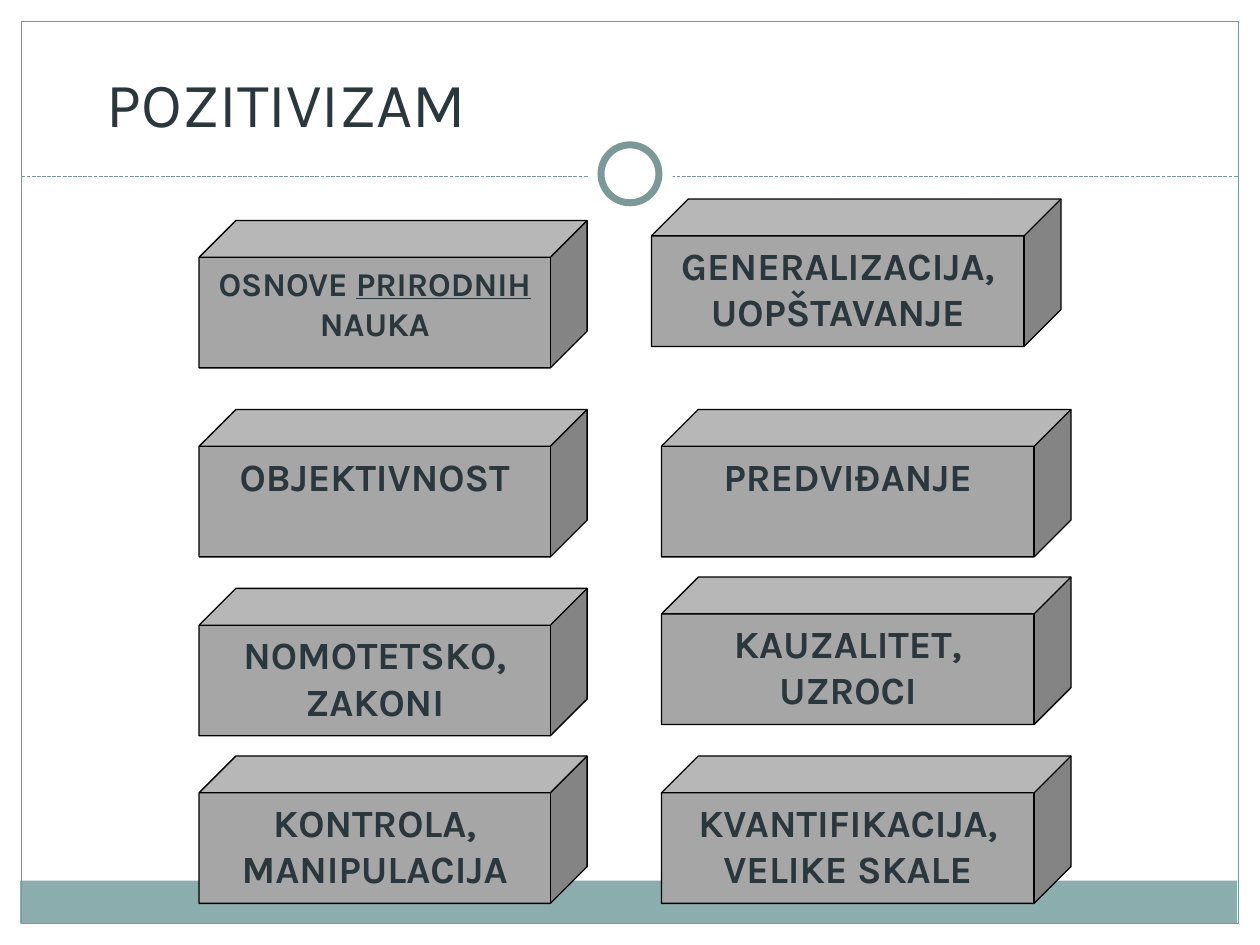
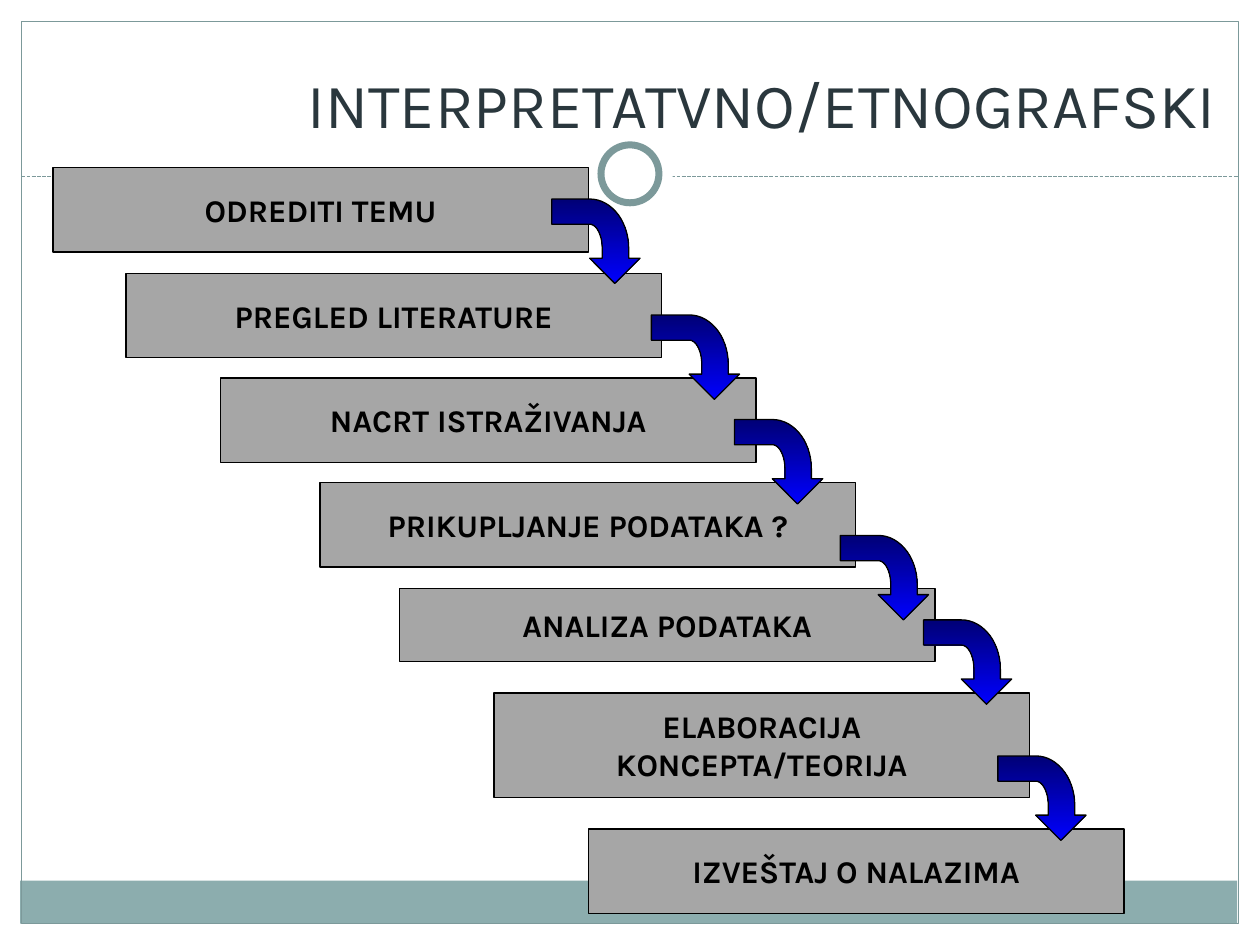
"""Builds two slides on positivist and interpretive research."""
import math
from dataclasses import dataclass
from typing import Any, Iterable, Optional

from lxml import etree
from pptx import Presentation
from pptx import util as u
from pptx.dml.color import RGBColor
from pptx.enum import dml, shapes, text
from pptx.oxml import ns

FONT = "Karla"
WHITE, BLACK, GREY = "FFFFFF", "000000", "A6A6A6"
INK, TEAL, BAND = "2A373D", "7C999A", "8CADAE"
ARROW_TOP, ARROW_BOTTOM = "000076", "0000FF"
CUBE_LEFT, CUBE_WIDTH, CUBE_HEIGHT = 1.58, 3.08, 1.17
RIGHT_CUBE_LEFT, RIGHT_CUBE_WIDTH = 5.25, 3.25
STEP_WIDTH = 4.25


@dataclass(frozen=True)
class Box:
    """Position and size in inches."""
    left: float
    top: float
    width: float
    height: float

    def lengths(self) -> tuple:
        """Return the four values as lengths."""
        return tuple(u.Inches(v) for v in (self.left, self.top, self.width, self.height))


@dataclass(frozen=True)
class Part:
    """A preset shape of the slide frame."""
    kind: Any
    box: Box
    fill: Optional[str] = None
    line: Optional[str] = None
    weight: float = 0.75


@dataclass(frozen=True)
class Title:
    """A slide title with its box and alignment."""
    wording: str
    box: Box
    align: Any


@dataclass(frozen=True)
class Cube:
    """A feature of positivism; underscores enclose underlined words."""
    box: Box
    lines: tuple
    size: float = 22


@dataclass(frozen=True)
class Step:
    """A research step."""
    left: float
    top: float
    lines: tuple
    height: float = 0.67


@dataclass(frozen=True)
class Arrow:
    """The start corner of an arrow that bends down."""
    left: float
    top: float


RECTANGLE, OVAL = shapes.MSO_SHAPE.RECTANGLE, shapes.MSO_SHAPE.OVAL
BACKDROP = [
    Part(RECTANGLE, Box(0, 0, 10, 1.52), WHITE),
    Part(RECTANGLE, Box(0, 0, 0.17, 7.5), WHITE),
    Part(RECTANGLE, Box(9.83, 0, 0.17, 7.5), WHITE),
    Part(RECTANGLE, Box(0.16, 6.99, 9.66, 0.34), BAND),
    Part(RECTANGLE, Box(0.17, 0.17, 9.66, 7.16), None, TEAL),
]
RING = [
    Part(OVAL, Box(4.67, 1.05, 0.67, 0.67), WHITE),
    Part(OVAL, Box(4.77, 1.15, 0.46, 0.46), WHITE, TEAL, 4),
]
POSITIVISM = Title("POZITIVIZAM", Box(0.75, 0.33, 8.5, 0.83), text.PP_ALIGN.LEFT)
INTERPRETIVE = Title("INTERPRETATVNO/ETNOGRAFSKI", Box(0.5, 0.17, 9.25, 1), text.PP_ALIGN.RIGHT)


def left_cube(top: float, wording: str, size: float = 22) -> Cube:
    """Describe a cube of the left column."""
    return Cube(Box(CUBE_LEFT, top, CUBE_WIDTH, CUBE_HEIGHT), (wording,), size)


def right_cube(top: float, *lines: str, left: float = RIGHT_CUBE_LEFT) -> Cube:
    """Describe a cube of the right column."""
    return Cube(Box(left, top, RIGHT_CUBE_WIDTH, CUBE_HEIGHT), lines)


CUBES = [
    left_cube(4.67, "NOMOTETSKO, ZAKONI"),
    left_cube(3.25, "OBJEKTIVNOST"),
    right_cube(4.58, "KAUZALITET,", "UZROCI"),
    left_cube(1.75, "OSNOVE _PRIRODNIH_ NAUKA", 19),
    right_cube(1.58, "GENERALIZACIJA, UOPŠTAVANJE", left=5.17),
    right_cube(3.25, "PREDVIĐANJE"),
    left_cube(6, "KONTROLA, MANIPULACIJA"),
    right_cube(6, "KVANTIFIKACIJA, VELIKE SKALE"),
]
STEPS = [
    Step(0.42, 1.33, ("ODREDITI TEMU",)),
    Step(1, 2.17, ("PREGLED LITERATURE",)),
    Step(1.75, 3, ("NACRT ISTRAŽIVANJA",)),
    Step(2.54, 3.83, ("PRIKUPLJANJE PODATAKA ?",)),
    Step(3.17, 4.67, ("ANALIZA PODATAKA",), 0.58),
    Step(3.92, 5.5, ("ELABORACIJA", "KONCEPTA/TEORIJA"), 0.83),
    Step(4.67, 6.58, ("IZVEŠTAJ O NALAZIMA",)),
]
ARROWS = [Arrow(4.38, 1.58), Arrow(5.17, 2.5), Arrow(5.83, 3.33),
          Arrow(6.67, 4.25), Arrow(7.33, 4.92), Arrow(7.92, 6)]


def color(value: str) -> RGBColor:
    """Turn a hex string into a colour."""
    return RGBColor.from_string(value)


def apply(target: Any, values: dict) -> None:
    """Set each format value on the target."""
    for name, value in values.items():
        setattr(target, name, value)


def style_shape(shape: Any, fill: Optional[str], line: Optional[str], weight: float = 0.75) -> None:
    """Set fill and outline, and remove the shadow."""
    shape.shadow.inherit = False
    if fill:
        shape.fill.solid()
        shape.fill.fore_color.rgb = color(fill)
    else:
        shape.fill.background()
    if line:
        shape.line.color.rgb = color(line)
        shape.line.width = u.Pt(weight)
    else:
        shape.line.fill.background()


def write(shape: Any, lines: Iterable[str], size: float, ink: str, frame: dict,
          align: Any = text.PP_ALIGN.CENTER, bold: bool = True) -> None:
    """Write one paragraph per line, underlining words between underscores."""
    text_frame = shape.text_frame
    apply(text_frame, frame)
    for index, line in enumerate(lines):
        paragraph = text_frame.add_paragraph() if index else text_frame.paragraphs[0]
        paragraph.alignment = align
        for position, piece in enumerate(line.split("_")):
            run = paragraph.add_run()
            run.text = piece
            run.font.color.rgb = color(ink)
            apply(run.font, {"name": FONT, "size": u.Pt(size), "bold": bold,
                             "underline": position % 2 == 1})


def add_part(slide: Any, part: Part) -> Any:
    """Draw a preset shape."""
    shape = slide.shapes.add_shape(part.kind, *part.box.lengths())
    style_shape(shape, part.fill, part.line, part.weight)
    return shape


def add_divider(slide: Any) -> None:
    """Draw the dashed line below the title."""
    points = [u.Inches(v) for v in (0.17, 1.4, 9.83, 1.4)]
    divider = slide.shapes.add_connector(shapes.MSO_CONNECTOR.STRAIGHT, *points)
    divider.line.color.rgb = color(TEAL)
    apply(divider.line, {"width": u.Pt(0.75), "dash_style": dml.MSO_LINE.SQUARE_DOT})
    etree.SubElement(divider._element.spPr, ns.qn("a:effectLst"))


def add_framed_slide(presentation: Any, title: Title) -> Any:
    """Add a slide with the shared frame and its title."""
    slide = presentation.slides.add_slide(presentation.slide_layouts[6])
    for part in BACKDROP:
        add_part(slide, part)
    add_divider(slide)
    for part in RING:
        add_part(slide, part)
    heading = slide.shapes.add_textbox(*title.box.lengths())
    write(heading, [title.wording], 36, INK,
          {"word_wrap": True, "vertical_anchor": text.MSO_ANCHOR.BOTTOM}, title.align, False)
    return slide


def add_cube(slide: Any, cube: Cube) -> None:
    """Draw a labelled cube."""
    shape = add_part(slide, Part(shapes.MSO_SHAPE.CUBE, cube.box, GREY, BLACK))
    shape.adjustments[0] = 0.25
    write(shape, cube.lines, cube.size, INK,
          {"word_wrap": True, "vertical_anchor": text.MSO_ANCHOR.TOP})


def add_step(slide: Any, step: Step) -> None:
    """Draw a research step."""
    box = Box(step.left, step.top, STEP_WIDTH, step.height)
    shape = add_part(slide, Part(RECTANGLE, box, GREY, BLACK))
    write(shape, step.lines, 18, BLACK,
          {"word_wrap": False, "vertical_anchor": text.MSO_ANCHOR.MIDDLE})


def bend(radius_x: float, radius_y: float) -> list:
    """Return points of a quarter ellipse from its top to its right end."""
    angles = [math.radians(degrees) for degrees in range(0, 91, 6)]
    return [(0.3 + radius_x * math.sin(a), 0.39 - radius_y * math.cos(a)) for a in angles]


def add_arrow(slide: Any, arrow: Arrow) -> None:
    """Draw a bent arrow with a vertical gradient."""
    head = [(0.7, 0.47), (0.5, 0.67), (0.3, 0.47)]
    outline = [(0, 0), *bend(0.31, 0.39), (0.61, 0.47), *head,
               (0.4, 0.47), *reversed(bend(0.1, 0.19)), (0, 0.2)]
    points = [(u.Inches(arrow.left + x), u.Inches(arrow.top + y)) for x, y in outline]
    builder = slide.shapes.build_freeform(*points[0])
    builder.add_line_segments(points[1:], close=True)
    shape = builder.convert_to_shape()
    style_shape(shape, ARROW_BOTTOM, BLACK)
    shape.fill.gradient()
    shape.fill.gradient_angle = 270
    for position, (stop, shade) in enumerate(zip(shape.fill.gradient_stops, (ARROW_TOP, ARROW_BOTTOM))):
        stop.position = position
        stop.color.rgb = color(shade)


def main() -> None:
    """Build and save the presentation."""
    presentation = Presentation()
    apply(presentation, {"slide_width": u.Inches(10), "slide_height": u.Inches(7.5)})
    positivism = add_framed_slide(presentation, POSITIVISM)
    for cube in CUBES:
        add_cube(positivism, cube)
    interpretive = add_framed_slide(presentation, INTERPRETIVE)
    for step in STEPS:
        add_step(interpretive, step)
    for arrow in ARROWS:
        add_arrow(interpretive, arrow)
    presentation.save("out.pptx")


if __name__ == "__main__":
    main()
